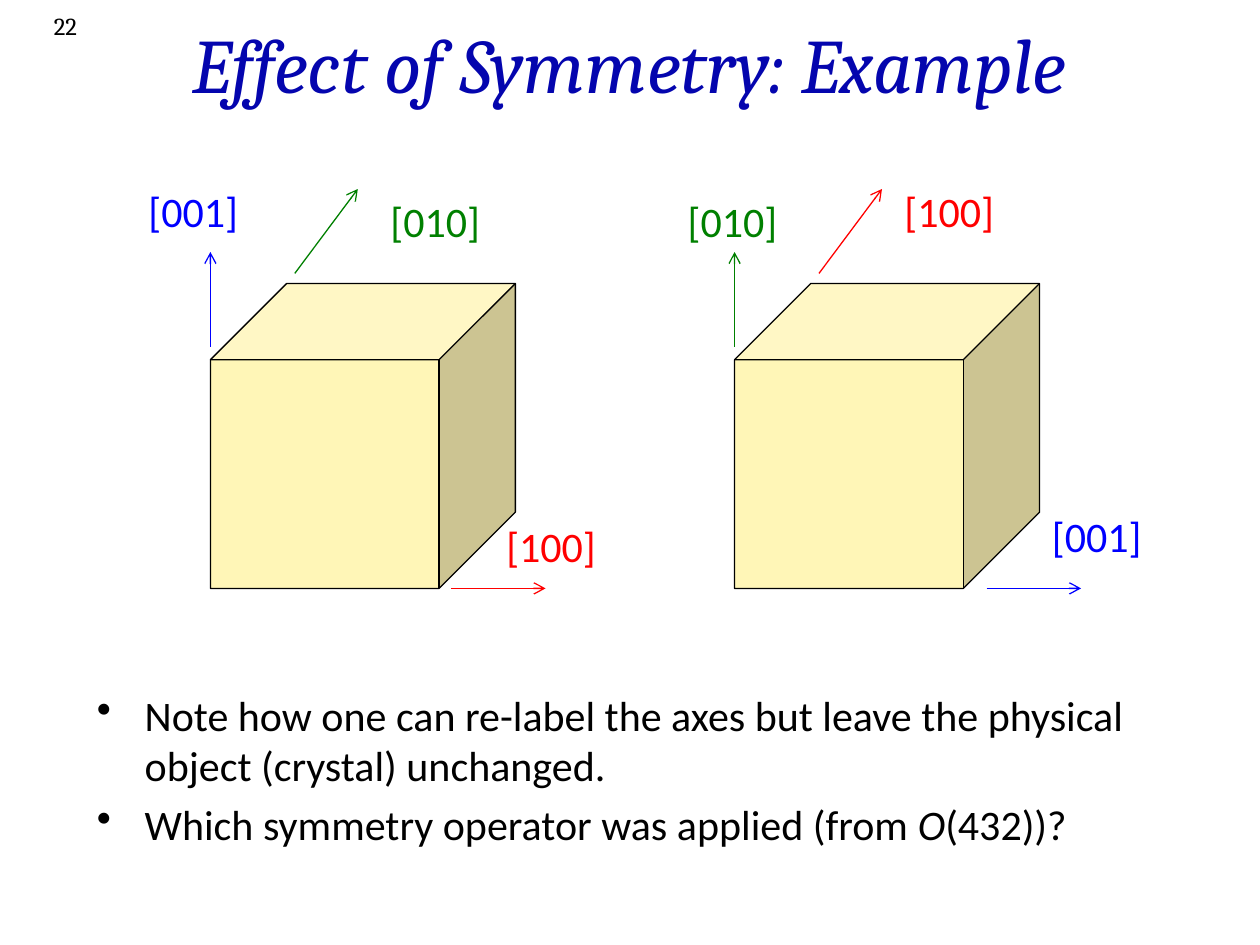
from lxml import etree
from pptx import Presentation
from pptx.dml.color import RGBColor
from pptx.enum.shapes import MSO_CONNECTOR, MSO_SHAPE
from pptx.enum.text import MSO_ANCHOR, PP_ALIGN
from pptx.oxml.ns import qn
from pptx.util import Inches, Pt

STRAIGHT = MSO_CONNECTOR.STRAIGHT
CUBE = MSO_SHAPE.CUBE
TOP, MIDDLE = MSO_ANCHOR.TOP, MSO_ANCHOR.MIDDLE
LEFT, CENTER, RIGHT = PP_ALIGN.LEFT, PP_ALIGN.CENTER, PP_ALIGN.RIGHT

BLACK, NAVY, CREAM = "000000", "0405AE", "FFF6B7"
# Each crystal direction keeps its colour in both cubes
AXIS_COLORS = {"[100]": "FF0000", "[010]": "008000", "[001]": "0000FF"}
CUBE_SIZE = 2.42


def color(hex_string):
    return RGBColor.from_string(hex_string)


def set_font(font, name, size, hex_string, italic=False):
    font.name = name
    font.size = Pt(size)
    font.color.rgb = color(hex_string)
    font.italic = italic


def add_text_box(page, box, wrap=True, anchor=TOP):
    frame = page.shapes.add_textbox(*map(Inches, box)).text_frame
    frame.word_wrap = wrap
    frame.vertical_anchor = anchor
    return frame


def add_line_of_text(page, box, text, name, size, hex_string,
                     align=LEFT, italic=False, wrap=True, anchor=TOP):
    para = add_text_box(page, box, wrap, anchor).paragraphs[0]
    para.text = text
    para.alignment = align
    set_font(para.font, name, size, hex_string, italic)


def add_arrow(page, start, end, hex_string):
    arrow = page.shapes.add_connector(STRAIGHT, *map(Inches, (*start, *end)))
    arrow.line.color.rgb = color(hex_string)
    arrow.line.width = Pt(0.75)
    outline = arrow.line._get_or_add_ln()
    etree.SubElement(outline, qn("a:tailEnd"), type="arrow")
    etree.SubElement(arrow._element.spPr, qn("a:effectLst"))


def add_labelled_cube(page, left, top, axes):
    """axes: (direction, label offset, arrow start offset, arrow end offset)."""
    cube = page.shapes.add_shape(
        CUBE, *map(Inches, (left, top, CUBE_SIZE, CUBE_SIZE)))
    cube.adjustments[0] = 0.25
    cube.shadow.inherit = False
    cube.fill.solid()
    cube.fill.fore_color.rgb = color(CREAM)
    cube.line.color.rgb = color(BLACK)
    cube.line.width = Pt(0.75)
    for direction, label, start, end in axes:
        hue = AXIS_COLORS[direction]
        add_arrow(page, (left + start[0], top + start[1]),
                  (left + end[0], top + end[1]), hue)
        add_line_of_text(page, (left + label[0], top + label[1], 0.95, 0.51),
                         direction, "Calibri", 24, hue, wrap=False)


def add_bullets(page, box, items):
    """items: one list of (text, italic) spans for each bullet."""
    frame = add_text_box(page, box)
    for index, spans in enumerate(items):
        para = frame.paragraphs[0] if index == 0 else frame.add_paragraph()
        para.space_before = Pt(4.8)
        set_font(para.font, "Calibri", 24, BLACK)
        for text, italic in spans:
            span = para.add_run()
            span.text = text
            set_font(span.font, "Calibri", 24, BLACK, italic)
        properties = para._p.get_or_add_pPr()
        properties.set("marL", str(Inches(0.38)))
        properties.set("indent", str(-Inches(0.38)))
        bullet = etree.Element(qn("a:buChar"), char="•")
        properties.find(qn("a:spcBef")).addnext(bullet)


def main():
    deck = Presentation()
    deck.slide_width, deck.slide_height = Inches(10), Inches(7.5)
    page = deck.slides.add_slide(deck.slide_layouts[6])

    # Heading and page number
    add_line_of_text(page, (0.75, 0.08, 8.5, 0.83),
                     "Effect of Symmetry: Example", "Cambria", 44, NAVY,
                     align=CENTER, italic=True, anchor=MIDDLE)
    add_line_of_text(page, (0.04, 0.04, 0.67, 0.33), "22", "Cambria", 14,
                     BLACK, align=RIGHT)

    # Cube before and after relabelling: right, back and up axes
    back_arrow = ((0.67, -0.08), (1.17, -0.75))
    up_arrow = ((0, 0.5), (0, -0.25))
    add_labelled_cube(page, 1.67, 2.25, [
        ("[100]", (2.25, 1.83), (1.91, CUBE_SIZE), (2.66, CUBE_SIZE)),
        ("[010]", (1.33, -0.75), *back_arrow),
        ("[001]", (-0.59, -0.83), *up_arrow),
    ])
    add_labelled_cube(page, 5.83, 2.25, [
        ("[001]", (2.42, 1.75), (2, CUBE_SIZE), (2.75, CUBE_SIZE)),
        ("[100]", (1.25, -0.83), *back_arrow),
        ("[010]", (-0.47, -0.75), *up_arrow),
    ])

    # Notes under the cubes
    add_bullets(page, (0.67, 5.42, 8.92, 1.42), [
        [("Note how one can re-label the axes but leave the physical "
          "object (crystal) unchanged.", False)],
        [("Which symmetry operator was applied (from ", False),
         ("O", True), ("(432))?", False)],
    ])

    deck.save("out.pptx")


if __name__ == "__main__":
    main()
